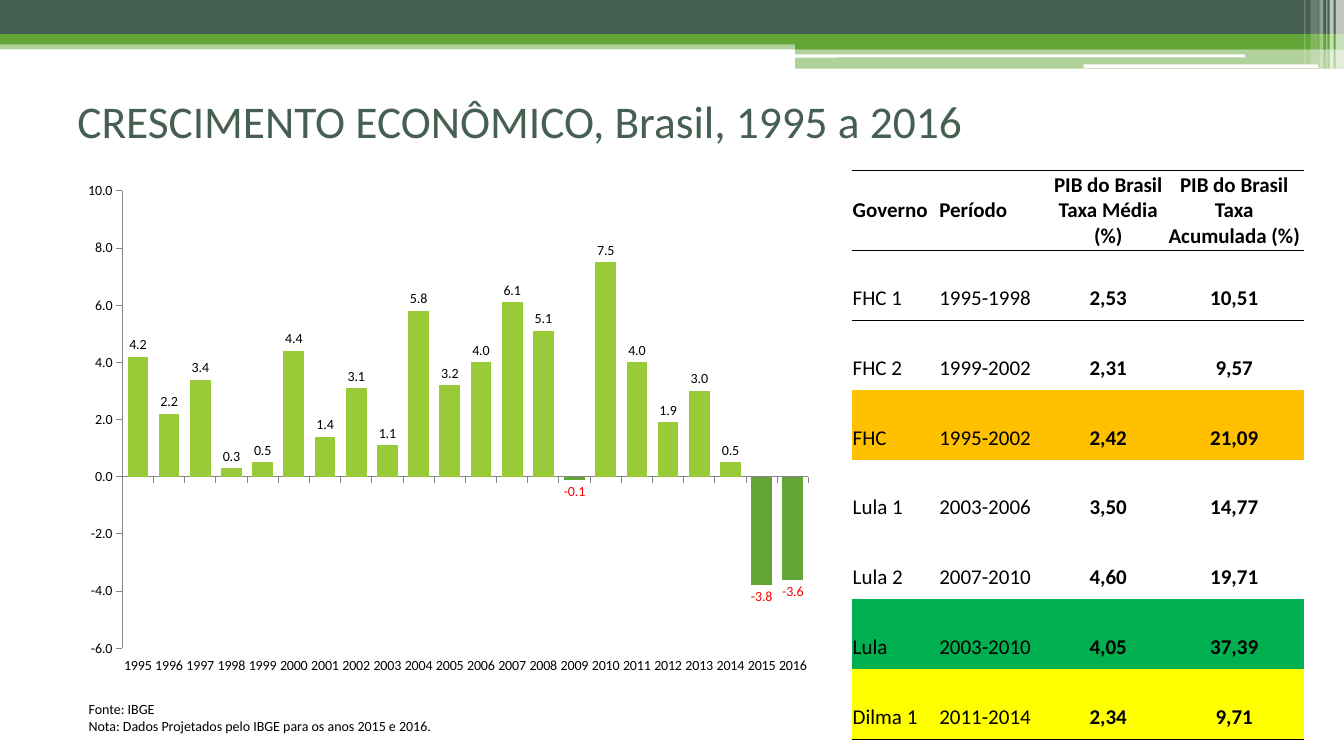
from dataclasses import dataclass

from lxml import etree
from pptx import Presentation
from pptx.chart.chart import Chart
from pptx.chart.data import CategoryChartData
from pptx.dml.color import RGBColor
from pptx.enum.chart import XL_CHART_TYPE, XL_LABEL_POSITION, XL_TICK_LABEL_POSITION, XL_TICK_MARK
from pptx.enum.shapes import MSO_SHAPE
from pptx.enum.text import MSO_ANCHOR, PP_ALIGN
from pptx.oxml import parse_xml
from pptx.oxml.ns import nsdecls, qn
from pptx.slide import Slide
from pptx.table import _Cell
from pptx.text.text import Font, TextFrame
from pptx.util import Pt

RECT = MSO_SHAPE.RECTANGLE
ROUNDED = MSO_SHAPE.ROUNDED_RECTANGLE
COLUMNS = XL_CHART_TYPE.COLUMN_CLUSTERED
OUTSIDE_END = XL_LABEL_POSITION.OUTSIDE_END
LABELS_LOW = XL_TICK_LABEL_POSITION.LOW
TICK_OUT = XL_TICK_MARK.OUTSIDE
TICK_NONE = XL_TICK_MARK.NONE
MIDDLE = MSO_ANCHOR.MIDDLE
TOP = MSO_ANCHOR.TOP
LEFT = PP_ALIGN.LEFT
CENTER = PP_ALIGN.CENTER

FONT = "Calibri"
BLACK = RGBColor(0x00, 0x00, 0x00)
WHITE = RGBColor(0xFF, 0xFF, 0xFF)
SLATE = RGBColor(0x45, 0x5F, 0x51)
GREEN = RGBColor(0x63, 0xA5, 0x37)
LIME = RGBColor(0x99, 0xCB, 0x38)
RED = RGBColor(0xFF, 0x00, 0x00)
GRAY = RGBColor(0x86, 0x86, 0x86)
ORANGE = RGBColor(0xFF, 0xC0, 0x00)
EMERALD = RGBColor(0x00, 0xB0, 0x50)
YELLOW = RGBColor(0xFF, 0xFF, 0x00)


@dataclass
class Band:
    left: float
    top: float
    width: float
    height: float
    color: RGBColor
    opacity: int = 100
    shape: MSO_SHAPE = RECT


@dataclass
class Government:
    name: str
    period: str
    mean_rate: str
    total_rate: str
    color: RGBColor | None = None


BANDS = [
    Band(0, 28.8, 960, 6.5, GREEN, 50),
    Band(0, 0, 960, 24.5, SLATE),
    Band(0, 24.5, 960, 7.2, GREEN),
    Band(568, 28.1, 392, 7.2, GREEN),
    Band(568, 34.6, 392, 14.4, GREEN, 50),
    Band(567.4, 38.9, 321.8, 2.2, WHITE, shape=ROUNDED),
    Band(774, 46.1, 167.8, 2.6, WHITE, shape=ROUNDED),
    Band(954, 0, 6, 49, WHITE, 65),
    Band(949.7, 0, 2.9, 49, WHITE, 65),
    Band(947.5, 0, 0.7, 49, WHITE, 60),
    Band(942.5, 0, 2.9, 49, WHITE, 40),
    Band(936, 0, 6, 46, WHITE, 20),
    Band(931.7, 0, 0.7, 46, WHITE, 30),
]

FIRST_YEAR = 1995
GROWTH = [4.2, 2.2, 3.4, 0.3, 0.5, 4.4, 1.4, 3.1, 1.1, 5.8, 3.2,
          4.0, 6.1, 5.1, -0.1, 7.5, 4.0, 1.9, 3.0, 0.5, -3.8, -3.6]

HEADINGS = ["Governo", "Período", "PIB do Brasil Taxa Média (%)", "PIB do Brasil Taxa Acumulada (%)"]
COLUMN_WIDTHS = [61.9, 81.4, 79.9, 100.1]
HEADING_HEIGHT, ROW_HEIGHT = 56.9, 49.9
GOVERNMENTS = [
    Government("FHC 1", "1995-1998", "2,53", "10,51"),
    Government("FHC 2", "1999-2002", "2,31", "9,57"),
    Government("FHC", "1995-2002", "2,42", "21,09", ORANGE),
    Government("Lula 1", "2003-2006", "3,50", "14,77"),
    Government("Lula 2", "2007-2010", "4,60", "19,71"),
    Government("Lula", "2003-2010", "4,05", "37,39", EMERALD),
    Government("Dilma 1", "2011-2014", "2,34", "9,71", YELLOW),
]


def style_font(font: Font, size: float, color: RGBColor, bold: bool = False) -> None:
    font.name = FONT
    font.size = Pt(size)
    font.bold = bold
    font.color.rgb = color


def write(frame: TextFrame, text: str, *, size: float, color: RGBColor = BLACK, bold: bool = False,
          align: PP_ALIGN = LEFT, spacing: float = 1.0) -> None:
    frame.word_wrap = True
    frame.text = text
    for paragraph in frame.paragraphs:
        paragraph.alignment = align
        paragraph.line_spacing = spacing
        for run in paragraph.runs:
            style_font(run.font, size, color, bold)


def add_band(slide: Slide, band: Band) -> None:
    bar = slide.shapes.add_shape(band.shape, Pt(band.left), Pt(band.top), Pt(band.width), Pt(band.height))
    bar.shadow.inherit = False
    bar.line.fill.background()
    bar.fill.solid()
    bar.fill.fore_color.rgb = band.color
    if band.opacity < 100:
        color = bar.fill._xPr.find(f"{qn('a:solidFill')}/{qn('a:srgbClr')}")
        etree.SubElement(color, qn("a:alpha")).set("val", str(band.opacity * 1000))


def place_plot(chart: Chart, **fractions: float) -> None:
    plot_area = chart._chartSpace.chart.plotArea
    for layout in plot_area.findall(qn("c:layout")):
        plot_area.remove(layout)
    sizes = "".join(f'<c:{key} val="{value}"/>' for key, value in fractions.items())
    plot_area.insert(0, parse_xml(
        f'<c:layout {nsdecls("c")}><c:manualLayout><c:layoutTarget val="inner"/>'
        f'<c:xMode val="edge"/><c:yMode val="edge"/>{sizes}</c:manualLayout></c:layout>'))


def add_growth_chart(slide: Slide) -> None:
    data = CategoryChartData(number_format="0.0")
    data.categories = [str(FIRST_YEAR + offset) for offset in range(len(GROWTH))]
    data.add_series("Series 1", GROWTH)
    chart = slide.shapes.add_chart(COLUMNS, Pt(49.7), Pt(121.7), Pt(538.6), Pt(367.2), data).chart
    style_font(chart.font, 10, BLACK)
    chart.has_legend = False
    chart.has_title = False
    place_plot(chart, x=0.07, y=0.04, w=0.91, h=0.89)

    years, rates = chart.category_axis, chart.value_axis
    for axis in (years, rates):
        axis.has_major_gridlines = False
        axis.major_tick_mark = TICK_OUT
        axis.minor_tick_mark = TICK_NONE
        axis.format.line.color.rgb = GRAY
        style_font(axis.tick_labels.font, 10, BLACK)
        axis._element.find(f"{qn('c:txPr')}/{qn('a:bodyPr')}").set("rot", "0")
    years.tick_label_position = LABELS_LOW
    rates.minimum_scale, rates.maximum_scale, rates.major_unit = -6, 10, 2
    rates.tick_labels.number_format = "0.0"
    rates.tick_labels.number_format_is_linked = False

    plot = chart.plots[0]
    plot.gap_width = 50
    plot.vary_by_categories = False
    growth = plot.series[0]
    growth.invert_if_negative = False
    growth.format.fill.solid()
    growth.format.fill.fore_color.rgb = LIME
    labels = growth.data_labels
    labels.show_value = True
    labels.position = OUTSIDE_END
    labels.number_format = "0.0"
    labels.number_format_is_linked = False
    style_font(labels.font, 10, BLACK)
    for index, rate in enumerate(GROWTH):
        if rate < 0:
            point = growth.points[index]
            point.format.fill.solid()
            point.format.fill.fore_color.rgb = GREEN
            style_font(point.data_label.font, 10, RED)
            point.data_label.position = OUTSIDE_END


def add_rules(cell: _Cell, *sides: str) -> None:
    for index, side in enumerate(sides):
        cell._tc.get_or_add_tcPr().insert(index, parse_xml(
            f'<a:ln{side} {nsdecls("a")} w="{Pt(0.5)}"><a:solidFill>'
            f'<a:srgbClr val="{BLACK}"/></a:solidFill></a:ln{side}>'))


def add_government_table(slide: Slide) -> None:
    rows = [HEADINGS] + [[g.name, g.period, g.mean_rate, g.total_rate] for g in GOVERNMENTS]
    colors = [None] + [g.color for g in GOVERNMENTS]
    height = HEADING_HEIGHT + ROW_HEIGHT * len(GOVERNMENTS)
    table = slide.shapes.add_table(len(rows), len(HEADINGS), Pt(608.4), Pt(121.7),
                                   Pt(sum(COLUMN_WIDTHS)), Pt(height)).table
    table.first_row = table.horz_banding = False
    table._tbl.tblPr.find(qn("a:tableStyleId")).text = "{2D5ABB26-0587-4C30-8999-92F81FD0307C}"
    for column, width in zip(table.columns, COLUMN_WIDTHS):
        column.width = Pt(width)
    for r, (texts, color) in enumerate(zip(rows, colors)):
        table.rows[r].height = Pt(ROW_HEIGHT if r else HEADING_HEIGHT)
        for c, text in enumerate(texts):
            cell = table.cell(r, c)
            cell.vertical_anchor = MIDDLE
            cell.margin_left = cell.margin_right = cell.margin_top = Pt(0.7)
            cell.margin_bottom = Pt(0)
            if color is not None:
                cell.fill.solid()
                cell.fill.fore_color.rgb = color
            else:
                cell.fill.background()
            write(cell.text_frame, text, size=15, bold=r == 0 or c > 1,
                  align=CENTER if c > 1 else LEFT, spacing=2.0 if r else 1.0)
            if r == 0:
                add_rules(cell, "T", "B")
            elif r == 1:
                add_rules(cell, "T")
            elif r == len(GOVERNMENTS):
                add_rules(cell, "B")


def main() -> None:
    deck = Presentation()
    deck.slide_width, deck.slide_height = Pt(960), Pt(540)
    slide = deck.slides.add_slide(deck.slide_layouts[6])
    for band in BANDS:
        add_band(slide, band)
    heading = slide.shapes.add_textbox(Pt(48.2), Pt(70), Pt(864), Pt(32)).text_frame
    heading.vertical_anchor = MIDDLE
    write(heading, "CRESCIMENTO ECONÔMICO, Brasil, 1995 a 2016", size=32.4, color=SLATE)
    source = slide.shapes.add_textbox(Pt(56.2), Pt(496.8), Pt(494.6), Pt(31.7)).text_frame
    source.vertical_anchor = TOP
    write(source, "Fonte: IBGE\nNota: Dados Projetados pelo IBGE para os anos 2015 e 2016.", size=10)
    add_growth_chart(slide)
    add_government_table(slide)
    deck.save("out.pptx")


if __name__ == "__main__":
    main()
